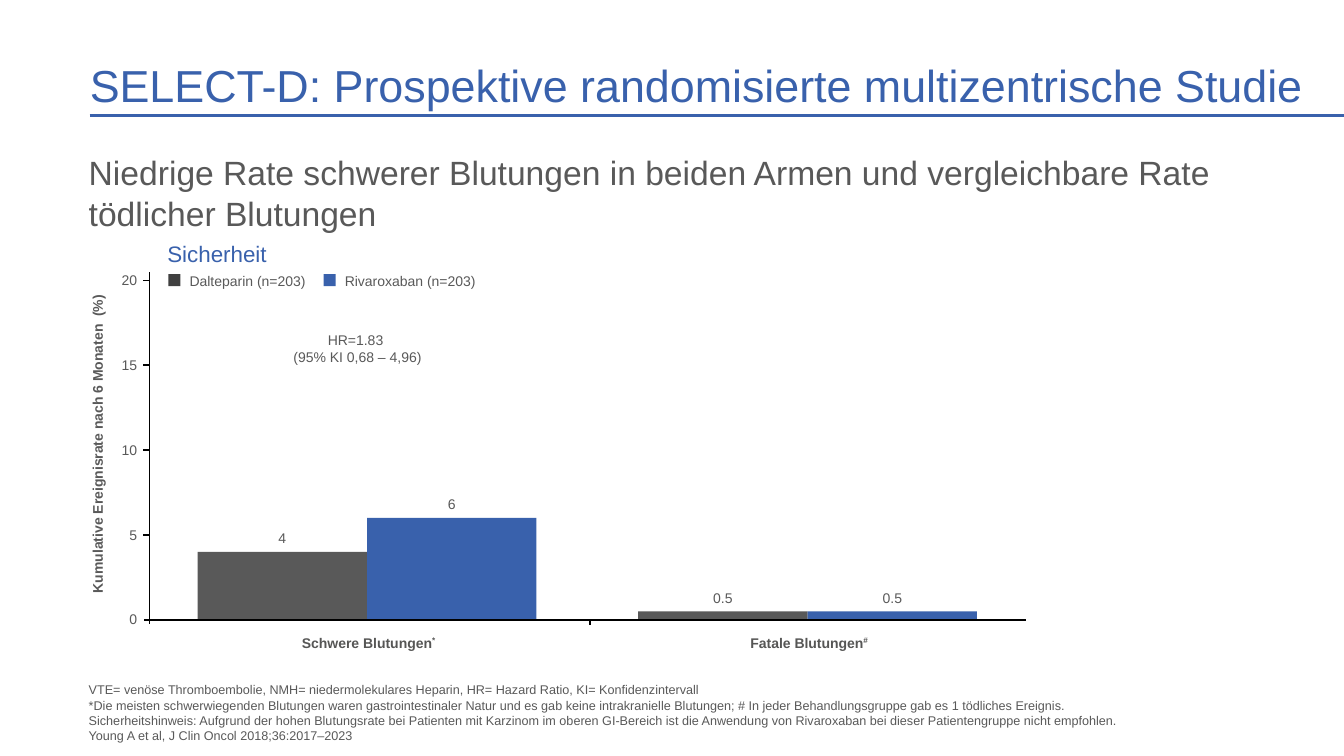
from dataclasses import dataclass

from lxml.etree import SubElement
from pptx import Presentation
from pptx.dml.color import RGBColor
from pptx.enum.shapes import MSO_CONNECTOR as Connector, MSO_SHAPE as Shape
from pptx.enum.text import MSO_ANCHOR as Anchor, MSO_AUTO_SIZE as AutoSize, PP_ALIGN as Align
from pptx.oxml.ns import qn
from pptx.util import Inches, Pt


@dataclass(frozen=True)
class Theme:
    font: str = "Arial"
    blue: str = "3961AC"
    gray: str = "595959"
    category_gray: str = "565655"
    legend_gray: str = "404040"
    black: str = "000000"
    title_size: int = 32
    subtitle_size: int = 24
    heading_size: int = 16
    label_size: int = 10
    footnote_size: int = 9


THEME = Theme()
AXIS_LEFT = 1.48
AXIS_BOTTOM = 6.15
UNIT_HEIGHT = 0.1685
TICK_STEP = 5
TICK_MAX = 20
GROUP_WIDTH = 4.37
GROUP_PADDING = 0.49
BAR_WIDTH = 1.68
LINE_HEIGHT = 0.17
SERIES_COLORS = (THEME.gray, THEME.blue)
GROUPS = (
    ("Schwere Blutungen", "*", (4, 6)),
    ("Fatale Blutungen", "#", (0.5, 0.5)),
)
LEGEND = (
    ("Dalteparin (n=203)", 1.67, THEME.legend_gray),
    ("Rivaroxaban (n=203)", 3.21, THEME.blue),
)
FOOTNOTE = "\n".join((
    "VTE= venöse Thromboembolie, NMH= niedermolekulares Heparin, HR= Hazard Ratio, KI= Konfidenzintervall",
    "*Die meisten schwerwiegenden Blutungen waren gastrointestinaler Natur und es gab keine "
    "intrakranielle Blutungen; # In jeder Behandlungsgruppe gab es 1 tödliches Ereignis. ",
    "Sicherheitshinweis: Aufgrund der hohen Blutungsrate bei Patienten mit Karzinom im oberen GI-Bereich "
    "ist die Anwendung von Rivaroxaban bei dieser Patientengruppe nicht empfohlen.",
    "Young A et al, J Clin Oncol 2018;36:2017–2023",
))


def fill_text(shape, text, size, color, align, anchor, bold=False):
    frame = shape.text_frame
    frame.word_wrap = True
    frame.auto_size = AutoSize.NONE
    frame.vertical_anchor = anchor
    frame.margin_left = frame.margin_right = frame.margin_top = frame.margin_bottom = 0
    paragraph = frame.paragraphs[0]
    paragraph.text = text
    paragraph.alignment = align
    paragraph.font.name = THEME.font
    paragraph.font.size = Pt(size)
    paragraph.font.bold = bold
    paragraph.font.color.rgb = RGBColor.from_string(color)
    return paragraph


def add_text(slide, text, left, top, width, height=LINE_HEIGHT, size=THEME.label_size,
             color=THEME.gray, align=Align.LEFT, anchor=Anchor.MIDDLE, bold=False, rotation=0):
    box = slide.shapes.add_textbox(Inches(left), Inches(top), Inches(width), Inches(height))
    box.rotation = rotation
    return fill_text(box, text, size, color, align, anchor, bold)


def add_line(slide, x1, y1, x2, y2, color=THEME.black, width=1):
    line = slide.shapes.add_connector(
        Connector.STRAIGHT, Inches(x1), Inches(y1), Inches(x2), Inches(y2))
    line.line.color.rgb = RGBColor.from_string(color)
    line.line.width = Pt(width)
    SubElement(line._element.spPr, qn("a:effectLst"))


def add_block(slide, left, top, width, height, color):
    block = slide.shapes.add_shape(
        Shape.RECTANGLE, Inches(left), Inches(top), Inches(width), Inches(height))
    block.shadow.inherit = False
    block.fill.solid()
    block.fill.fore_color.rgb = RGBColor.from_string(color)
    block.line.fill.background()


def add_title(slide, text):
    add_line(slide, 0.89, 1.15, 13.33, 1.15, THEME.blue, 2.25)
    title = slide.shapes.title
    title.left, title.top = Inches(0.89), Inches(0.57)
    title.width, title.height = Inches(12.08), Inches(0.54)
    fill_text(title, text, THEME.title_size, THEME.blue, Align.LEFT, Anchor.BOTTOM)


def add_axes(slide):
    add_line(slide, AXIS_LEFT, 2.7, AXIS_LEFT, 6.19)
    add_line(slide, 1.43, AXIS_BOTTOM, 10.18, AXIS_BOTTOM)
    divider = AXIS_LEFT + GROUP_WIDTH
    add_line(slide, divider, AXIS_BOTTOM, divider, AXIS_BOTTOM + 0.05)
    for value in range(0, TICK_MAX + 1, TICK_STEP):
        y = AXIS_BOTTOM - value * UNIT_HEIGHT
        if value:
            add_line(slide, AXIS_LEFT - 0.06, y, AXIS_LEFT, y)
        add_text(slide, str(value), 1.01, y - 0.09, 0.35, align=Align.RIGHT)
    add_text(slide, "Kumulative Ereignisrate nach 6 Monaten  (%)", -0.77, 4.32, 3.47,
             align=Align.CENTER, bold=True, rotation=270)


def add_group(slide, left, name, mark, values):
    for index, (value, color) in enumerate(zip(values, SERIES_COLORS)):
        bar_left = left + GROUP_PADDING + index * BAR_WIDTH
        height = value * UNIT_HEIGHT
        top = AXIS_BOTTOM - height
        add_block(slide, bar_left, top, BAR_WIDTH, height, color)
        add_text(slide, str(value), bar_left, top - 0.22, BAR_WIDTH, align=Align.CENTER)
    category = add_text(slide, name, left, 6.29, GROUP_WIDTH, color=THEME.category_gray,
                        align=Align.CENTER, bold=True)
    superscript = category.add_run()
    superscript.text = mark
    superscript.font._element.set("baseline", "30000")


def add_legend(slide):
    for name, left, color in LEGEND:
        add_block(slide, left, 2.72, 0.12, 0.12, color)
        add_text(slide, name, left + 0.21, 2.7, 1.75 if left > 3 else 1.26)


def main():
    presentation = Presentation()
    presentation.slide_width, presentation.slide_height = Inches(13.33), Inches(7.5)
    slide = presentation.slides.add_slide(presentation.slide_layouts[5])
    add_title(slide, "SELECT-D: Prospektive randomisierte multizentrische Studie")
    add_text(slide, "Niedrige Rate schwerer Blutungen in beiden Armen und vergleichbare Rate "
             "tödlicher Blutungen", 0.88, 1.51, 11.92, 0.8, THEME.subtitle_size, anchor=Anchor.TOP)
    add_text(slide, "Sicherheit", 1.66, 2.38, 2.82, 0.27, THEME.heading_size, THEME.blue)
    add_legend(slide)
    for index, group in enumerate(GROUPS):
        add_group(slide, AXIS_LEFT - 0.01 + index * GROUP_WIDTH, *group)
    add_axes(slide)
    add_text(slide, "HR=1.83 \n(95% KI 0,68 – 4,96)", 2.79, 3.24, 1.51, 0.44, align=Align.CENTER)
    add_text(slide, FOOTNOTE, 0.88, 6.76, 11.62, 0.61, THEME.footnote_size, anchor=Anchor.BOTTOM)
    presentation.save("out.pptx")


if __name__ == "__main__":
    main()
